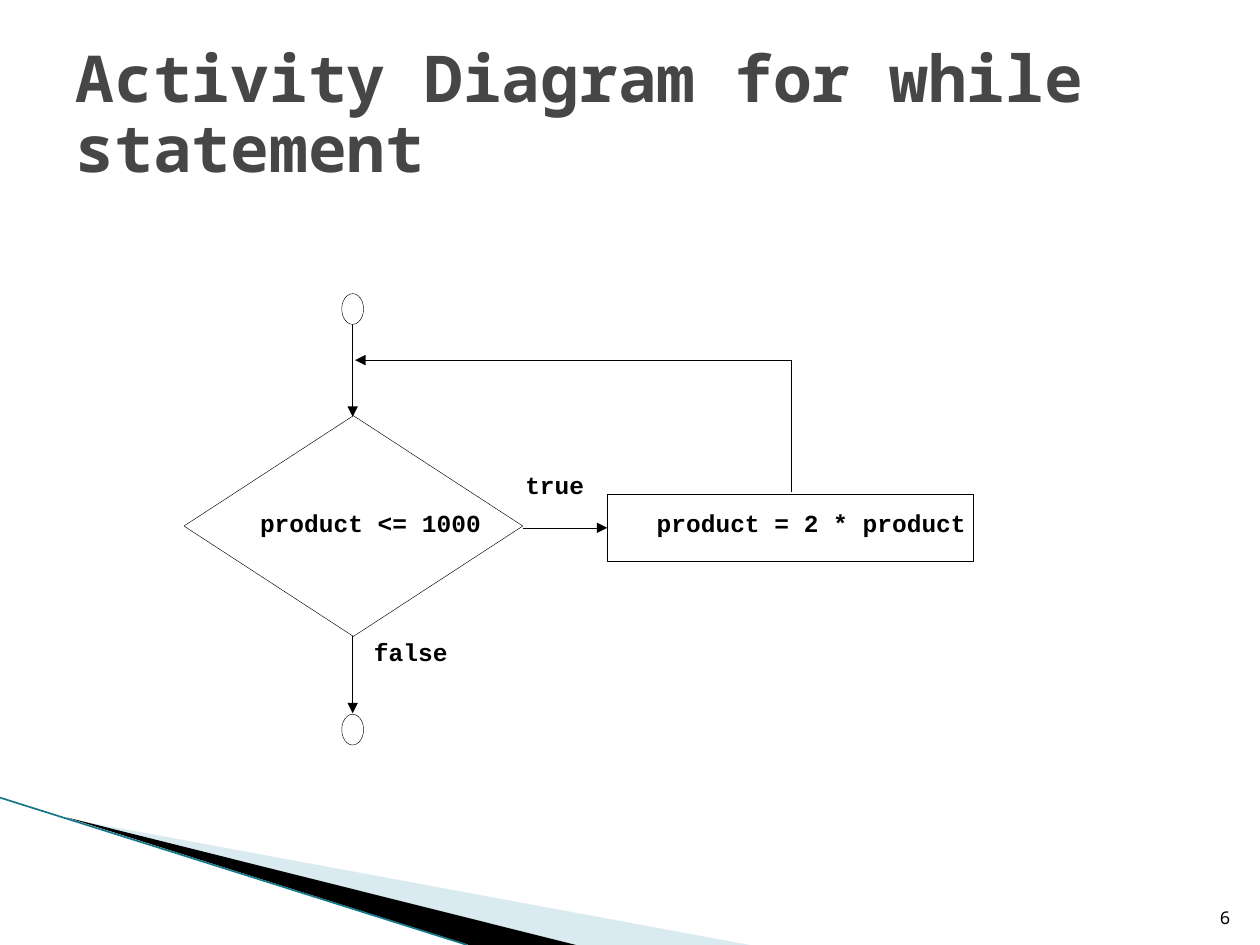
"""Build the activity diagram slide for the while statement."""
from lxml import etree
from pptx import Presentation, util as u
from pptx.dml.color import RGBColor
from pptx.enum import shapes, text
from pptx.oxml import ns

COLORS = {"ink": "000000", "title": "464646", "paper": "FFFFFF",
          "pale": "A0CBDC", "edge": "16778A"}
MONO, CODE = "Noto Sans Mono", "Courier New"
AXIS = 7.11


def rgb(name):
    return RGBColor.from_string(COLORS[name])


def cm(*values):
    return [u.Cm(v) for v in values]


def style_text(tf, size, font, color, bold=False, align=None):
    p = tf.paragraphs[0]
    p.alignment = align
    f = p.runs[0].font
    f.size, f.name, f.bold = u.Pt(size), font, bold
    f.color.rgb = rgb(color)


def add_title(s, words):
    sp = s.shapes.title
    sp.left, sp.top, sp.width, sp.height = cm(1.27, 0.76, 22.86, 3.18)
    tf = sp.text_frame
    tf.text = words
    tf.vertical_anchor = text.MSO_ANCHOR.MIDDLE
    tf.paragraphs[0].line_spacing = 0.9
    style_text(tf, 36.9, MONO, "title", True, text.PP_ALIGN.LEFT)


def add_label(s, words, box, align=text.PP_ALIGN.LEFT):
    tf = s.shapes.add_textbox(*cm(*box)).text_frame
    tf.margin_left = tf.margin_right = tf.margin_top = tf.margin_bottom = 0
    tf.word_wrap = True
    tf.text = words
    style_text(tf, 14, CODE, "ink", True, align)


def add_page_number(s, number):
    tf = s.shapes.add_textbox(*cm(24.03, 17.81, 1.02, 1.02)).text_frame
    tf.word_wrap = True
    tf.vertical_anchor = text.MSO_ANCHOR.BOTTOM
    tf.text = number
    style_text(tf, 10, MONO, "ink", align=text.PP_ALIGN.RIGHT)


def add_node(s, kind, box):
    sp = s.shapes.add_shape(kind, *cm(*box))
    sp.shadow.inherit = False
    sp.fill.solid()
    sp.fill.fore_color.rgb = rgb("paper")
    sp.line.color.rgb = rgb("ink")
    sp.line.width = u.Pt(0.25)


def add_line(s, start, end, arrow=True, color="ink", width=0.25):
    c = s.shapes.add_connector(shapes.MSO_CONNECTOR.STRAIGHT, *cm(*start, *end))
    c.line.color.rgb = rgb(color)
    c.line.width = u.Pt(width)
    if arrow:
        etree.SubElement(c.line._get_or_add_ln(), ns.qn("a:tailEnd"), type="triangle")
    etree.SubElement(c._element.spPr, ns.qn("a:effectLst"))


def add_wedge(s, points, color, alpha=None):
    first, *rest = [cm(*pt) for pt in points]
    fb = s.shapes.build_freeform(*first)
    fb.add_line_segments(rest, close=True)
    sp = fb.convert_to_shape()
    sp.shadow.inherit = False
    sp.line.fill.background()
    sp.fill.solid()
    sp.fill.fore_color.rgb = rgb(color)
    if alpha:
        clr = sp._element.spPr.find(".//" + ns.qn("a:srgbClr"))
        etree.SubElement(clr, ns.qn("a:alpha"), val=str(alpha * 1000))


def add_decoration(s):
    add_wedge(s, [(1.4, 16.51), (15.11, 19.05), (11.58, 19.05)], "pale", 40)
    add_wedge(s, [(1.35, 16.48), (11.61, 19.05), (9.45, 19.05)], "ink")
    add_line(s, (0, 16.08), (9.42, 19.05), False, "edge", 0.95)


def add_diagram(s):
    kinds = shapes.MSO_SHAPE
    right = text.PP_ALIGN.RIGHT
    add_node(s, kinds.DIAMOND, (3.71, 8.38, 6.83, 4.45))
    add_label(s, "product <= 1000", (4.52, 10.24, 5.18, 0.97), right)
    add_line(s, (AXIS, 6.54), (AXIS, 8.4))
    add_line(s, (AXIS, 12.83), (AXIS, 14.38))
    for top in (5.92, 14.4):
        add_node(s, kinds.OVAL, (AXIS - 0.22, top, 0.44, 0.62))
    add_node(s, kinds.RECTANGLE, (12.24, 9.96, 7.39, 1.35))
    add_line(s, (10.54, 10.64), (12.24, 10.64))
    add_label(s, "product = 2 * product", (12.37, 10.24, 7.11, 1.02), right)
    add_label(s, "true", (10.59, 9.47, 1.52, 1.22))
    add_label(s, "false", (7.54, 12.85, 1.85, 1.22))
    add_line(s, (15.96, 9.91), (15.96, 7.26), False)
    add_line(s, (15.96, 7.26), (7.16, 7.26))


def main():
    prs = Presentation()
    prs.slide_width, prs.slide_height = cm(25.4, 19.05)
    s = prs.slides.add_slide(prs.slide_layouts[5])
    add_decoration(s)
    add_page_number(s, "6")
    add_title(s, "Activity Diagram for while statement")
    add_diagram(s)
    prs.save("out.pptx")


if __name__ == "__main__":
    main()
